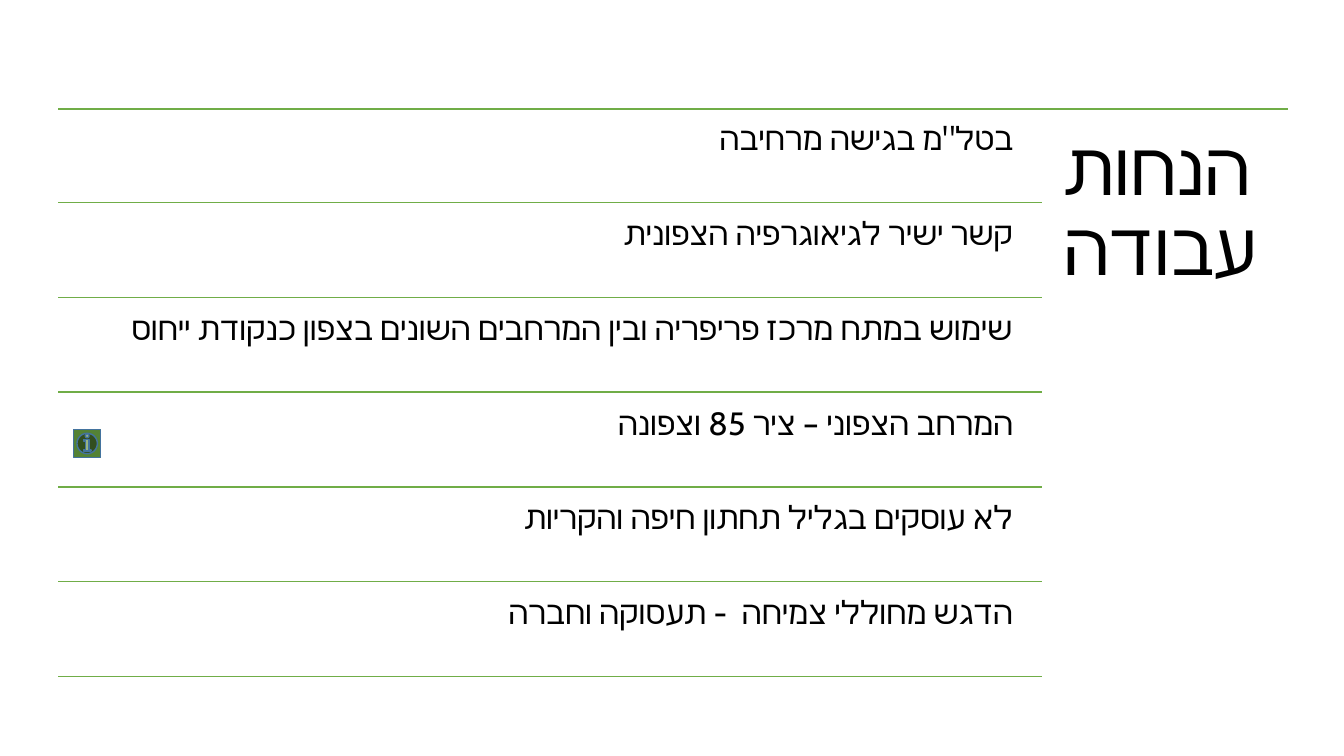
import pptx
import pptx.dml.color
import pptx.enum.shapes
import pptx.enum.text
import pptx.oxml.ns
import pptx.util
from lxml import etree

Inches = pptx.util.Inches
qn = pptx.oxml.ns.qn
Align = pptx.enum.text.PP_ALIGN


def paint(color_format, hex_color):
    color_format.rgb = pptx.dml.color.RGBColor.from_string(hex_color)


def add_text(text, box, inset, size, align):
    frame = slide.shapes.add_textbox(*[Inches(v) for v in box]).text_frame
    frame_format = {"word_wrap": True,
                    "vertical_anchor": pptx.enum.text.MSO_ANCHOR.TOP}
    for side in ("left", "top", "right", "bottom"):
        frame_format["margin_" + side] = Inches(inset)
    for name, value in frame_format.items():
        setattr(frame, name, value)
    paragraph = frame.paragraphs[0]
    paragraph.alignment = align
    paragraph.line_spacing = 0.9
    run = paragraph.add_run()
    run.text = text
    for name, value in {"name": "Cabin", "size": pptx.util.Pt(size)}.items():
        setattr(run.font, name, value)
    paint(run.font.color, "000000")
    # Hebrew letters take the complex-script font
    etree.SubElement(run.font._element, qn("a:cs")).set("typeface", "Cabin")
    return paragraph


deck = pptx.Presentation()
deck.slide_width, deck.slide_height = Inches(13.33), Inches(7.5)
slide = deck.slides.add_slide(deck.slide_layouts[6])

assumptions = [
    'בטל"מ בגישה מרחיבה',
    "קשר ישיר לגיאוגרפיה הצפונית",
    "שימוש במתח מרכז פריפריה ובין המרחבים השונים בצפון כנקודת ייחוס",
    "המרחב הצפוני – ציר 85 וצפונה",
    "לא עוסקים בגליל תחתון חיפה והקריות",
    "הדגש מחוללי צמיחה  - תעסוקה וחברה",
]
left, list_right, title_right = 0.58, 10.33, 12.77
first_top, row_pitch, row_height = 1.12, 0.94, 0.89

# Title column
add_text("הנחות עבודה", (list_right, 1.08, title_right - list_right, 5.68),
         0.22, 53, Align.LEFT)

# Assumptions, one per row, with a rule below each
rules = [(1.08, title_right)]
for index, assumption in enumerate(assumptions):
    top = first_top + index * row_pitch
    row = add_text(assumption, (left, top, 9.57, row_height), 0.1, 23, Align.RIGHT)
    row._p.get_or_add_pPr().set("rtl", "1")
    rules.append((top + row_height, list_right))

for y, right in rules:
    rule = slide.shapes.add_connector(
        pptx.enum.shapes.MSO_CONNECTOR.STRAIGHT,
        Inches(left), Inches(y), Inches(right), Inches(y))
    paint(rule.line.fill.fore_color if rule.line.fill.type else rule.line.color, "70AD47")
    rule.line.width = pptx.util.Pt(1)
    etree.SubElement(rule._element.spPr, qn("a:effectLst"))

# Information button
info_button = slide.shapes.add_shape(
    pptx.enum.shapes.MSO_SHAPE.ACTION_BUTTON_INFORMATION,
    Inches(0.73), Inches(4.26), Inches(0.27), Inches(0.28))
info_button.shadow.inherit = False
info_button.fill.solid()
paint(info_button.fill.fore_color, "548235")
paint(info_button.line.color, "43739E")
info_button.line.width = pptx.util.Pt(1)

deck.save("out.pptx")
